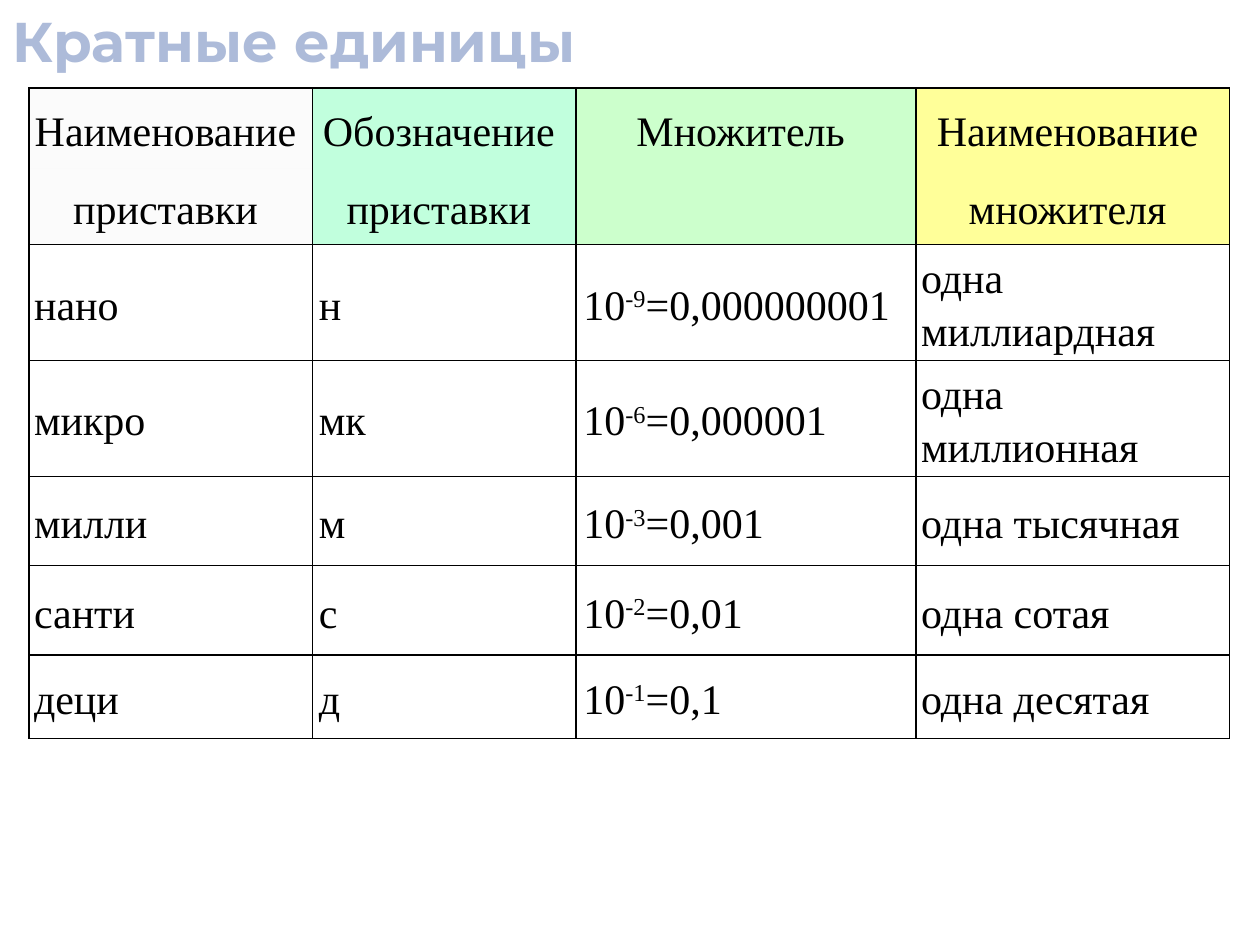
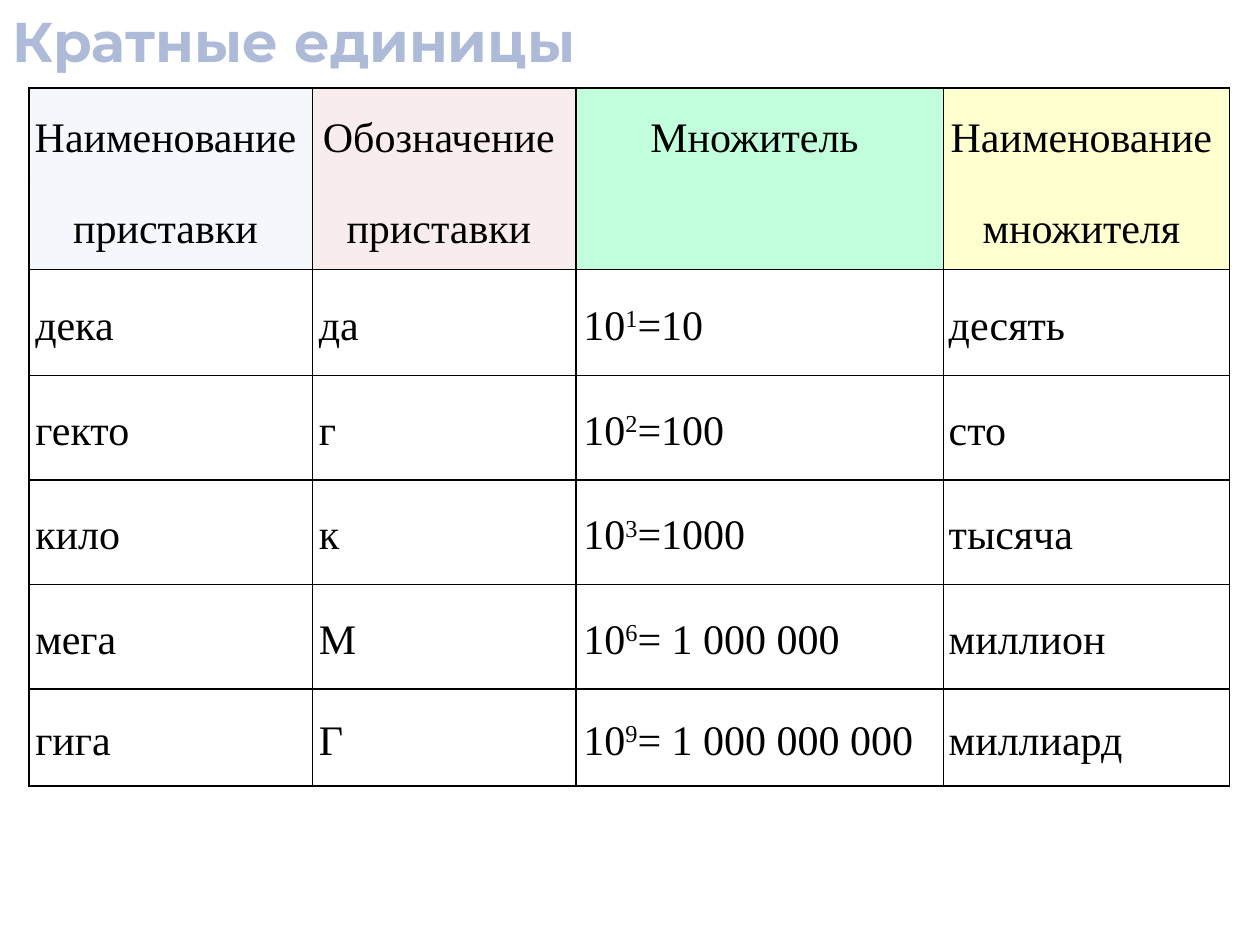
from dataclasses import dataclass

from lxml import etree
from pptx import Presentation
from pptx.dml.color import RGBColor
from pptx.enum.text import MSO_ANCHOR, MSO_AUTO_SIZE, PP_ALIGN
from pptx.oxml.ns import qn
from pptx.util import Inches, Pt

TITLE_ONLY = 5
LEFT, CENTER = PP_ALIGN.LEFT, PP_ALIGN.CENTER
TOP, MIDDLE = MSO_ANCHOR.TOP, MSO_ANCHOR.MIDDLE
FIT_SHAPE = MSO_AUTO_SIZE.SHAPE_TO_FIT_TEXT

COLORS = {
    "title": "ADBBD9",
    "ink": "000000",
    "grey": "F2F2F2",
    "mint": "C1FFDD",
    "green": "CCFFCC",
    "yellow": "FFFF99",
    "blue": "DCE6F2",
    "rose": "F2DCDB",
}
TITLE = "Кратные единицы"
TITLE_FONT, TABLE_FONT = "Montserrat", "Times New Roman"
HEADINGS = [
    ["Наименование ", "Обозначение ", "Множитель ", "Наименование "],
    ["приставки ", "приставки ", "", "множителя "],
]
HEADER_ROWS = len(HEADINGS)


@dataclass
class Tint:
    color: str
    opacity: int = 100


@dataclass
class Prefix:
    name: str
    symbol: str
    exponent: str
    value: str
    wording: str


@dataclass
class PrefixTable:
    widths: list[float]
    heights: list[float]
    tints: list[Tint]
    indents: list[float]
    prefixes: list[Prefix]


TABLES = [
    PrefixTable(
        widths=[2.25, 2.09, 2.7, 2.49],
        heights=[0.64, 0.6, 0.73, 0.71, 0.71, 0.71, 0.66],
        tints=[Tint("grey", 24), Tint("mint"), Tint("green"), Tint("yellow")],
        indents=[0.04, 0.05, 0.06, 0.04],
        prefixes=[
            Prefix("нано", "н", "-9", "=0,000000001", "одна миллиардная"),
            Prefix("микро", "мк", "-6", "=0,000001", "одна миллионная"),
            Prefix("милли", "м", "-3", "=0,001", "одна тысячная"),
            Prefix("санти", "с", "-2", "=0,01", "одна сотая"),
            Prefix("деци", "д", "-1", "=0,1", "одна десятая"),
        ],
    ),
    PrefixTable(
        widths=[2.25, 2.09, 2.92, 2.27],
        heights=[0.74, 0.7, 0.84, 0.83, 0.83, 0.83, 0.77],
        tints=[Tint("blue", 29), Tint("rose", 51), Tint("mint"), Tint("yellow", 46)],
        indents=[0.05, 0.05, 0.06, 0.04],
        prefixes=[
            Prefix("дека", "да", "1", "=10", "десять"),
            Prefix("гекто", "г", "2", "=100", "сто"),
            Prefix("кило", "к", "3", "=1000", "тысяча"),
            Prefix("мега", "М", "6", "= 1 000 000", "миллион"),
            Prefix("гига", "Г", "9", "= 1 000 000 000", "миллиард"),
        ],
    ),
]


def rgb(name: str) -> RGBColor:
    return RGBColor.from_string(COLORS[name])


def add_run(p, text: str, font: str, size: int, color: str):
    r = p.add_run()
    r.text = text
    r.font.name, r.font.size = font, Pt(size)
    r.font.color.rgb = rgb(color)
    return r


def add_title(slide) -> None:
    sp = slide.shapes.title
    sp.left, sp.top, sp.width, sp.height = 0, 0, Inches(10), Inches(0.64)
    tf = sp.text_frame
    tf.vertical_anchor, tf.auto_size = TOP, FIT_SHAPE
    p = tf.paragraphs[0]
    p.alignment = LEFT
    add_run(p, TITLE, TITLE_FONT, 32, "title").font.bold = True


def set_borders(cell, open_side: str = "") -> None:
    """Rule every side of the cell in black except open_side."""
    tc_pr = cell._tc.get_or_add_tcPr()
    for side in ("lnL", "lnR", "lnT", "lnB"):
        ln = etree.SubElement(tc_pr, qn(f"a:{side}"), w=str(Pt(1)))
        if side == open_side:
            etree.SubElement(ln, qn("a:noFill"))
        else:
            fill = etree.SubElement(ln, qn("a:solidFill"))
            etree.SubElement(fill, qn("a:srgbClr"), val=COLORS["ink"])


def set_tint(cell, tint: Tint) -> None:
    cell.fill.solid()
    cell.fill.fore_color.rgb = rgb(tint.color)
    if tint.opacity < 100:
        clr = cell._tc.tcPr.find(qn("a:solidFill")).find(qn("a:srgbClr"))
        etree.SubElement(clr, qn("a:alpha"), val=str(tint.opacity * 1000))


def write_cell(cell, texts: list[str], align, indent: float = 0) -> None:
    """Write the texts as runs; the second one is a superscript."""
    cell.margin_left = cell.margin_right = cell.margin_top = cell.margin_bottom = 0
    cell.vertical_anchor = MIDDLE
    p = cell.text_frame.paragraphs[0]
    p.alignment, p.line_spacing = align, 1.15
    p._p.get_or_add_pPr().set("marL", str(Inches(indent)))
    for i, text in enumerate(texts):
        r = add_run(p, text, TABLE_FONT, 24, "ink")
        if i == 1:
            r.font._element.set("baseline", "30000")


def add_prefix_table(slide, spec_table: PrefixTable) -> None:
    widths, heights = spec_table.widths, spec_table.heights
    table = slide.shapes.add_table(
        len(heights), len(widths), Inches(0.23), Inches(0.7),
        Inches(sum(widths)), Inches(sum(heights))).table
    table.first_row = table.horz_banding = False
    for column, width in zip(table.columns, widths):
        column.width = Inches(width)
    for row, height in zip(table.rows, heights):
        row.height = Inches(height)

    for row, (headings, open_side) in enumerate(zip(HEADINGS, ("lnB", "lnT"))):
        for col, (heading, tint) in enumerate(zip(headings, spec_table.tints)):
            cell = table.cell(row, col)
            set_borders(cell, open_side)
            set_tint(cell, tint)
            if heading:
                write_cell(cell, [heading], CENTER)

    for row, item in enumerate(spec_table.prefixes, HEADER_ROWS):
        contents = [[item.name], [item.symbol],
                    ["10", item.exponent, item.value], [item.wording]]
        for col, (texts, indent) in enumerate(zip(contents, spec_table.indents)):
            cell = table.cell(row, col)
            set_borders(cell)
            cell.fill.background()
            write_cell(cell, texts, LEFT, indent)


def main() -> None:
    prs = Presentation()
    prs.slide_width, prs.slide_height = Inches(10), Inches(7.5)
    for prefix_table in TABLES:
        slide = prs.slides.add_slide(prs.slide_layouts[TITLE_ONLY])
        add_title(slide)
        add_prefix_table(slide, prefix_table)
    prs.save("out.pptx")


if __name__ == "__main__":
    main()
